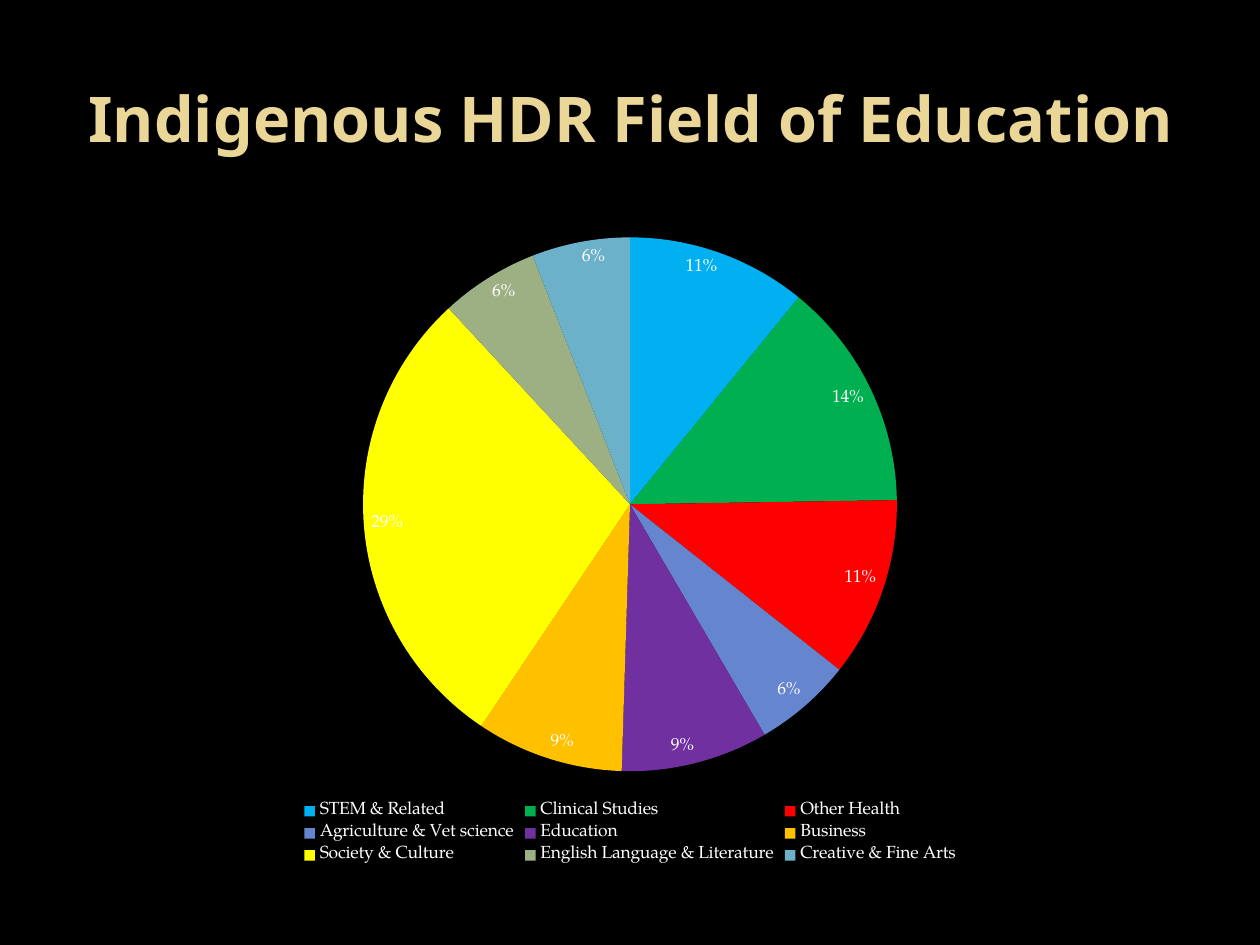
from pptx import Presentation
from pptx.chart.data import CategoryChartData
from pptx.dml.color import RGBColor
from pptx.enum.chart import XL_CHART_TYPE, XL_LABEL_POSITION, XL_LEGEND_POSITION
from pptx.enum.text import MSO_ANCHOR, PP_ALIGN
from pptx.util import Emu, Pt

PIE = XL_CHART_TYPE.PIE
INSIDE_END = XL_LABEL_POSITION.INSIDE_END
BOTTOM = XL_LEGEND_POSITION.BOTTOM
MIDDLE = MSO_ANCHOR.MIDDLE
CENTER = PP_ALIGN.CENTER

EMU_PER_INCH = 914400
PX_PER_INCH = 126

# Field of education, share, slice colour
FIELDS = [
    ("STEM & Related", 11, "00B0F0"),
    ("Clinical Studies", 14, "00B050"),
    ("Other Health", 11, "FF0000"),
    ("Agriculture & Vet science", 6, "6585CF"),
    ("Education", 9, "7030A0"),
    ("Business", 9, "FFC000"),
    ("Society & Culture", 29, "FFFF00"),
    ("English Language & Literature", 6, "9CB084"),
    ("Creative & Fine Arts", 6, "6BB1C9"),
]


def px(*lengths):
    return [Emu(round(length * EMU_PER_INCH / PX_PER_INCH)) for length in lengths]


def color(hex_string):
    return RGBColor.from_string(hex_string)


class SlideBuilder:
    background = "000000"
    title_color = "EAD696"
    title_font = "Noto Sans"
    title_size = 36
    chart_color = "FFFFFF"
    chart_font = "TeX Gyre Pagella"
    chart_size = 10

    def __init__(self, slide):
        self.slide = slide
        fill = slide.background.fill
        fill.solid()
        fill.fore_color.rgb = color(self.background)

    def style_font(self, font, name, size, hex_string, bold=False):
        font.name = name
        font.size = Pt(size)
        font.bold = bold
        font.color.rgb = color(hex_string)

    def title(self, text, left, top, width, height):
        shape = self.slide.shapes.add_textbox(*px(left, top, width, height))
        frame = shape.text_frame
        frame.word_wrap = True
        frame.vertical_anchor = MIDDLE
        paragraph = frame.paragraphs[0]
        paragraph.alignment = CENTER
        run = paragraph.add_run()
        run.text = text
        self.style_font(run.font, self.title_font, self.title_size,
                        self.title_color, bold=True)

    def pie(self, fields, left, top, width, height):
        names, values, colors = zip(*fields)
        data = CategoryChartData()
        data.categories = names
        data.add_series("Series 1", values)
        chart = self.slide.shapes.add_chart(
            PIE, *px(left, top, width, height), data).chart
        chart.has_title = False
        self.style_font(chart.font, self.chart_font, self.chart_size,
                        self.chart_color)

        # Legend
        chart.has_legend = True
        chart.legend.position = BOTTOM
        chart.legend.include_in_layout = False

        # Slices
        plot = chart.plots[0]
        plot.vary_by_categories = True
        for index, hex_string in enumerate(colors):
            point_format = plot.series[0].points[index].format
            point_format.fill.solid()
            point_format.fill.fore_color.rgb = color(hex_string)
            point_format.line.fill.background()

        # Percentage labels
        plot.has_data_labels = True
        labels = plot.data_labels
        labels.show_percentage = True
        labels.show_value = False
        labels.number_format = "0%"
        labels.number_format_is_linked = False
        labels.position = INSIDE_END
        self.style_font(labels.font, self.chart_font, self.chart_size,
                        self.chart_color)


def main():
    presentation = Presentation()
    presentation.slide_width, presentation.slide_height = px(1260, 945)
    blank_layout = presentation.slide_layouts[6]
    builder = SlideBuilder(presentation.slides.add_slide(blank_layout))

    builder.title("Indigenous HDR Field of Education", 25, 38, 1211, 158)
    builder.pie(FIELDS, 63, 220, 1134, 649)

    presentation.save("out.pptx")


if __name__ == "__main__":
    main()
